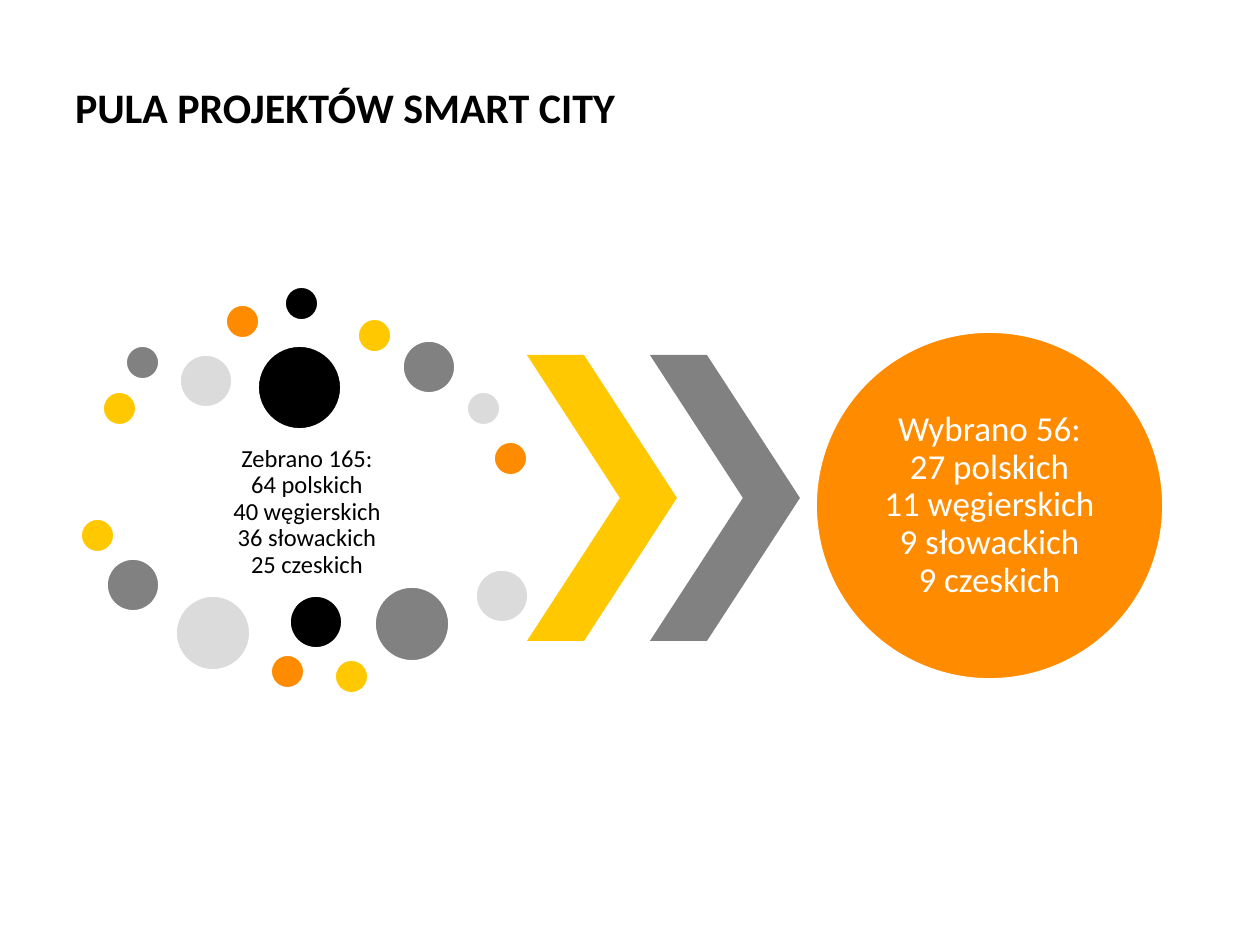
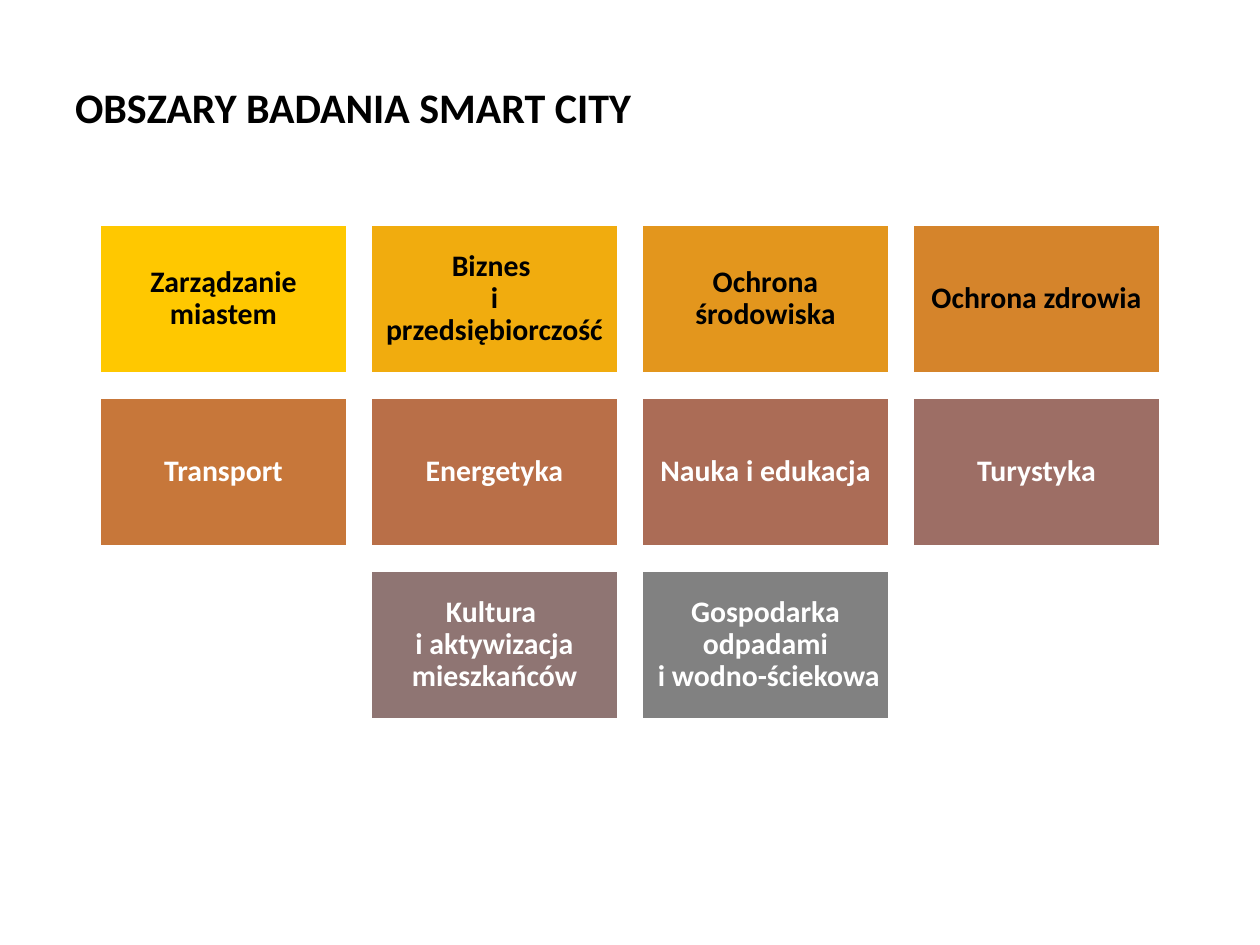
"""Build two slides on the smart city project pool and its research areas."""
from itertools import cycle

from pptx import Presentation
from pptx import util as u
from pptx.dml.color import RGBColor
from pptx.enum import shapes, text

FONT = "Calibri"
COLORS = {
    "yellow": "FFC800", "grey": "818181", "light": "DBDBDB",
    "orange": "FF8C00", "black": "000000", "white": "FFFFFF",
}

POOL_TITLE = "PULA PROJEKTÓW SMART CITY"
COLLECTED = ["Zebrano 165:", "64 polskich", "40 węgierskich", "36 słowackich", "25 czeskich"]
SELECTED = ["Wybrano 56:", "27 polskich", "11 węgierskich", "9 słowackich", "9 czeskich"]
DOT_COLORS = ["yellow", "grey", "light", "orange", "black"]
SMALL, MEDIUM, LARGE, HUB = 33, 52, 74, 83
DOTS = [
    (103, 392, SMALL), (126, 346, SMALL), (180, 355, MEDIUM),
    (226, 305, SMALL), (285, 287, SMALL), (358, 319, SMALL),
    (403, 341, MEDIUM), (467, 392, SMALL), (494, 442, SMALL),
    (258, 346, HUB), (81, 519, SMALL), (107, 559, MEDIUM),
    (176, 596, LARGE), (271, 655, SMALL), (290, 596, MEDIUM),
    (335, 660, SMALL), (375, 587, LARGE), (476, 570, MEDIUM),
]
CHEVRONS = [(527, "yellow"), (650, "grey")]

AREAS_TITLE = "OBSZARY BADANIA SMART CITY"
AREA_ROWS = [
    ("black", [("Zarządzanie miastem", "FFC800"),
               ("Biznes \vi przedsiębiorczość", "F1AC0E"),
               ("Ochrona środowiska", "E3961D"),
               ("Ochrona zdrowia", "D5842B")]),
    ("white", [("Transport", "C7773A"),
               ("Energetyka", "B96F48"),
               ("Nauka i edukacja", "AB6C56"),
               ("Turystyka", "9D6E65")]),
    ("white", [("Kultura \vi aktywizacja mieszkańców", "8F7573"),
               ("Gospodarka odpadami\v i wodno-ściekowa", "818181")]),
]
GRID_LEFT, GRID_TOP, GRID_COLUMNS = 100, 225, 4
TILE_WIDTH, TILE_HEIGHT = 247, 148
COLUMN_GAP, ROW_GAP = 24, 25


def px(length):
    return u.Emu(round(length * 914400 / 126))


def rgb(color):
    return RGBColor.from_string(COLORS.get(color, color))


def write(shape, words, size, color, inset=0, bold=False):
    frame = shape.text_frame
    frame.word_wrap = True
    frame.auto_size = text.MSO_AUTO_SIZE.NONE
    frame.vertical_anchor = text.MSO_ANCHOR.MIDDLE
    frame.margin_left = frame.margin_right = px(inset)
    frame.margin_top = frame.margin_bottom = px(inset)
    paragraph = frame.paragraphs[0]
    paragraph.text = words
    paragraph.alignment = text.PP_ALIGN.CENTER
    paragraph.line_spacing = 0.9
    font = paragraph.font
    font.name, font.size, font.bold = FONT, u.Pt(size), bold
    font.color.rgb = rgb(color)


def add_filled(slide, kind, box, color, outlined=True):
    shape = slide.shapes.add_shape(kind, *map(px, box))
    shape.shadow.inherit = False
    shape.fill.solid()
    shape.fill.fore_color.rgb = rgb(color)
    if outlined:
        shape.line.color.rgb = rgb("white")
        shape.line.width = u.Pt(1)
    else:
        shape.line.fill.background()
    return shape


def add_titled_slide(presentation, words):
    slide = presentation.slides.add_slide(presentation.slide_layouts[5])
    title = slide.shapes.title
    title.left, title.top, title.width, title.height = map(px, (62, 69, 1164, 64))
    write(title, words, 24, "black", bold=True)
    frame = title.text_frame
    frame.vertical_anchor = text.MSO_ANCHOR.TOP
    frame.margin_left = frame.margin_right = px(13)
    frame.margin_top = frame.margin_bottom = px(6)
    paragraph = frame.paragraphs[0]
    paragraph.alignment = text.PP_ALIGN.LEFT
    paragraph.line_spacing = 1.13
    return slide


def build_pool(presentation):
    slide = add_titled_slide(presentation, POOL_TITLE)
    collected = slide.shapes.add_textbox(*map(px, (103, 445, 408, 135)))
    write(collected, "\v".join(COLLECTED), 14, "black", inset=2)
    for (left, top, size), color in zip(DOTS, cycle(DOT_COLORS)):
        add_filled(slide, shapes.MSO_SHAPE.OVAL, (left, top, size, size), color)
    for left, color in CHEVRONS:
        chevron = add_filled(slide, shapes.MSO_SHAPE.CHEVRON, (left, 355, 150, 286), color, outlined=False)
        chevron.adjustments[0] = 0.62
    selected = add_filled(slide, shapes.MSO_SHAPE.OVAL, (816, 332, 347, 347), "orange")
    write(selected, "\v".join(SELECTED), 20, "white")


def build_areas(presentation):
    slide = add_titled_slide(presentation, AREAS_TITLE)
    for row, (text_color, areas) in enumerate(AREA_ROWS):
        top = GRID_TOP + row * (TILE_HEIGHT + ROW_GAP)
        first_column = (GRID_COLUMNS - len(areas)) // 2
        for column, (name, fill) in enumerate(areas, first_column):
            left = GRID_LEFT + column * (TILE_WIDTH + COLUMN_GAP)
            tile = add_filled(slide, shapes.MSO_SHAPE.RECTANGLE, (left, top, TILE_WIDTH, TILE_HEIGHT), fill)
            write(tile, name, 17, text_color, inset=9, bold=True)


def main():
    presentation = Presentation()
    presentation.slide_width, presentation.slide_height = px(1260), px(945)
    build_pool(presentation)
    build_areas(presentation)
    presentation.save("out.pptx")


if __name__ == "__main__":
    main()
